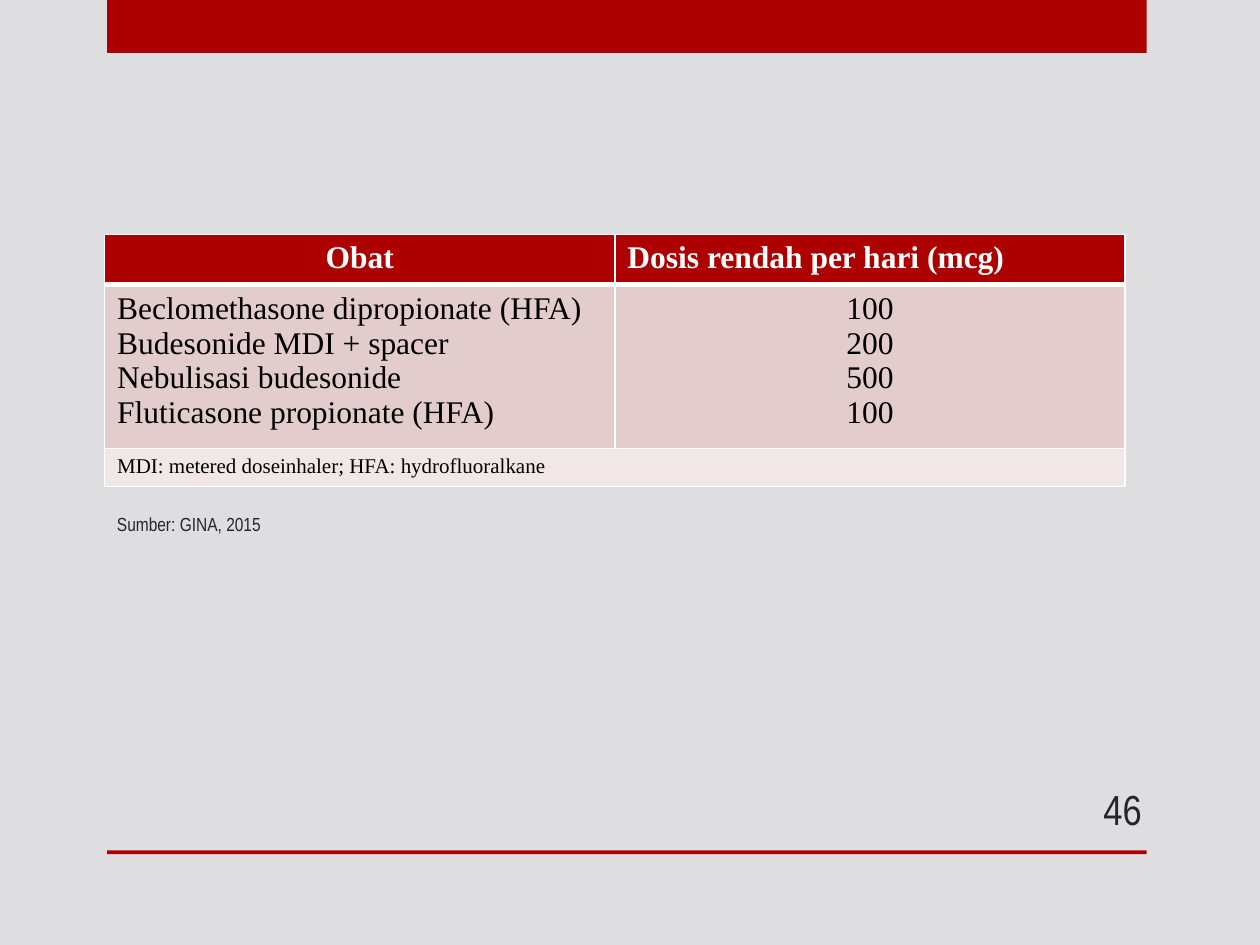
from lxml.etree import SubElement
from pptx import Presentation
from pptx.dml.color import RGBColor
from pptx.enum.shapes import MSO_SHAPE
from pptx.enum.text import MSO_ANCHOR, PP_ALIGN
from pptx.oxml.ns import qn
from pptx.util import Inches, Pt

COLORS = {
    "background": "DEDEE0",
    "accent": "AD0101",
    "text": "262626",
    "black": "000000",
    "white": "FFFFFF",
    "body": "E3CCCC",
    "note": "F1E7E7",
}
DOSES = {
    "Beclomethasone dipropionate (HFA)": "100",
    "Budesonide MDI + spacer": "200",
    "Nebulisasi budesonide": "500",
    "Fluticasone propionate (HFA)": "100",
}


def color(name):
    return RGBColor.from_string(COLORS[name])


def write_text(frame, text, font="Times New Roman", size=18, ink="black",
               bold=False, align=PP_ALIGN.LEFT):
    frame.text = text
    for paragraph in frame.paragraphs:
        paragraph.alignment = align
        for run in paragraph.runs:
            run.font.name = font
            run.font.size = Pt(size)
            run.font.bold = bold
            run.font.color.rgb = color(ink)


class DoseSlide:
    """Hold the style and the current slide, and add each kind of element."""

    def __init__(self, presentation):
        self.label_font = "Arial Narrow"
        self.border = "white"
        self.slide = presentation.slides.add_slide(presentation.slide_layouts[6])
        fill = self.slide.background.fill
        fill.solid()
        fill.fore_color.rgb = color("background")

    def add_bar(self, top, height):
        shape = self.slide.shapes.add_shape(
            MSO_SHAPE.RECTANGLE, Inches(0.85), Inches(top), Inches(8.25), Inches(height))
        shape.shadow.inherit = False
        shape.fill.solid()
        shape.fill.fore_color.rgb = color("accent")
        shape.line.fill.background()

    def add_label(self, text, left, top, width, height, anchor, **style):
        shape = self.slide.shapes.add_textbox(
            Inches(left), Inches(top), Inches(width), Inches(height))
        frame = shape.text_frame
        frame.word_wrap = True
        frame.vertical_anchor = anchor
        write_text(frame, text, font=self.label_font, ink="text", **style)

    def add_table(self, left, top, widths, heights):
        shape = self.slide.shapes.add_table(
            len(heights), len(widths), Inches(left), Inches(top),
            Inches(sum(widths)), Inches(sum(heights)))
        table = shape.table
        for column, width in zip(table.columns, widths):
            column.width = Inches(width)
        for row, height in zip(table.rows, heights):
            row.height = Inches(height)
        return table

    def fill_cell(self, cell, text, fill, top_line=1, bottom_line=1, **style):
        write_text(cell.text_frame, text, **style)
        self.draw_borders(cell, top_line, bottom_line)
        cell.fill.solid()
        cell.fill.fore_color.rgb = color(fill)

    def draw_borders(self, cell, top_line, bottom_line):
        properties = cell._tc.get_or_add_tcPr()
        for side, width in zip("LRTB", (1, 1, top_line, bottom_line)):
            line = SubElement(properties, qn(f"a:ln{side}"), w=str(Pt(width)))
            solid = SubElement(line, qn("a:solidFill"))
            SubElement(solid, qn("a:srgbClr"), val=COLORS[self.border])


def main():
    presentation = Presentation()
    presentation.slide_width = Inches(10)
    presentation.slide_height = Inches(7.5)
    page = DoseSlide(presentation)
    page.add_bar(0, 0.42)
    page.add_bar(6.75, 0.03)
    page.add_label("Sumber: GINA, 2015", 0.83, 4.06, 7.42, 0.24,
                   MSO_ANCHOR.BOTTOM, size=10.8)

    table = page.add_table(0.83, 1.86, (4.05, 4.05), (0.37, 1.2, 0.28))
    columns = (
        ("Obat", PP_ALIGN.CENTER, DOSES.keys(), PP_ALIGN.LEFT),
        ("Dosis rendah per hari (mcg)", PP_ALIGN.LEFT, DOSES.values(), PP_ALIGN.CENTER),
    )
    for index, (heading, heading_align, entries, entry_align) in enumerate(columns):
        page.fill_cell(table.cell(0, index), heading, "accent", bottom_line=3,
                       ink="white", bold=True, align=heading_align)
        page.fill_cell(table.cell(1, index), "\n".join(entries), "body", top_line=3,
                       align=entry_align)
    note = table.cell(2, 0)
    note.merge(table.cell(2, 1))
    page.fill_cell(note, "MDI: metered doseinhaler; HFA: hydrofluoralkane", "note", size=12)
    page.draw_borders(table.cell(2, 1), 1, 1)

    page.add_label("46", 8.33, 6.22, 0.83, 0.4, MSO_ANCHOR.MIDDLE,
                   size=24, align=PP_ALIGN.RIGHT)
    presentation.save("out.pptx")


if __name__ == "__main__":
    main()
